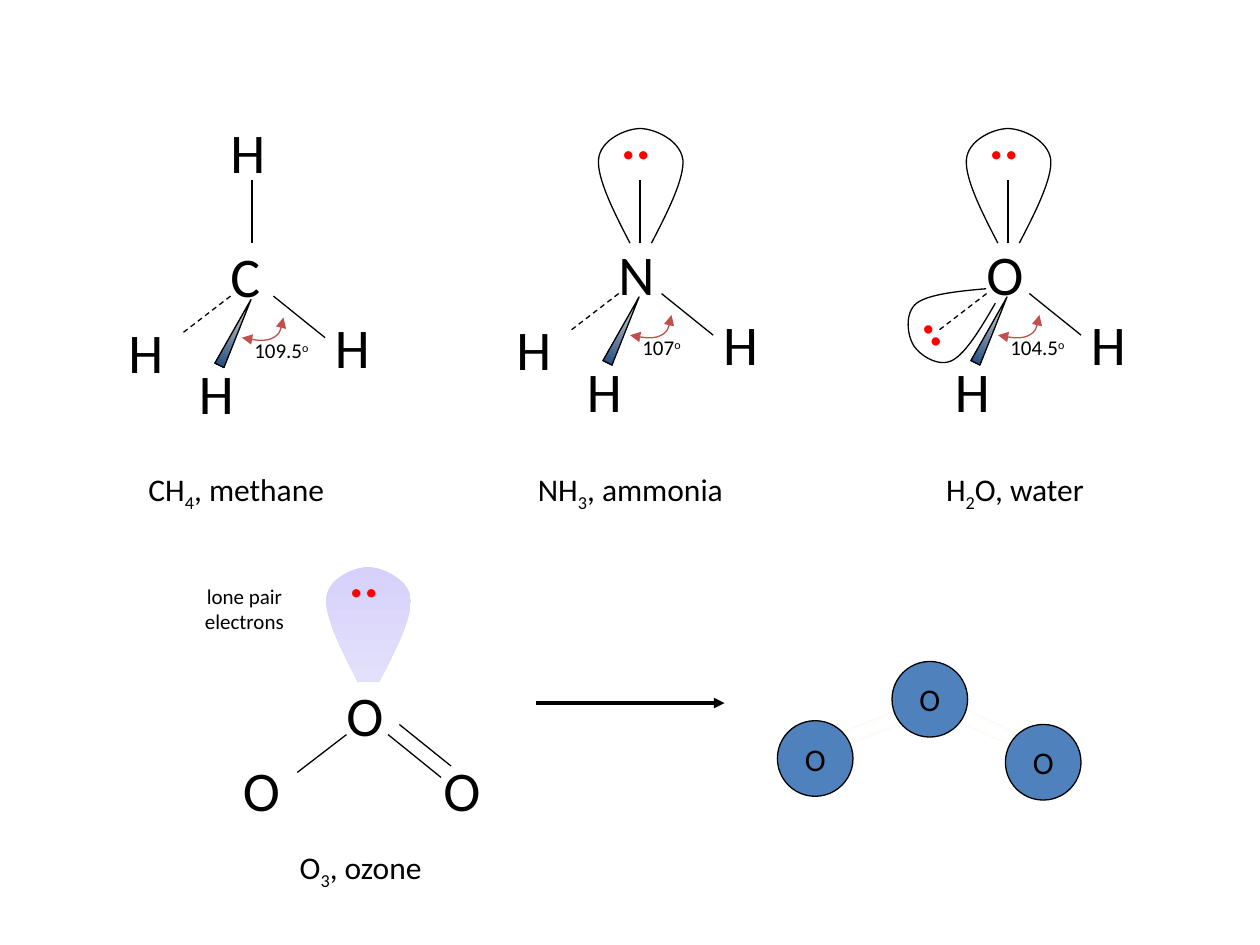
from copy import deepcopy

from lxml import etree
from pptx import Presentation
from pptx.dml.color import RGBColor
from pptx.enum.dml import MSO_LINE
from pptx.enum.shapes import MSO_CONNECTOR, MSO_SHAPE
from pptx.enum.text import MSO_ANCHOR, MSO_AUTO_SIZE, PP_ALIGN
from pptx.oxml.ns import qn
from pptx.util import Inches, Pt

STRAIGHT = MSO_CONNECTOR.STRAIGHT
DASH = MSO_LINE.DASH
TRIANGLE = MSO_SHAPE.ISOSCELES_TRIANGLE
RECTANGLE = MSO_SHAPE.RECTANGLE
OVAL = MSO_SHAPE.OVAL
MIDDLE = MSO_ANCHOR.MIDDLE
FIT_SHAPE = MSO_AUTO_SIZE.SHAPE_TO_FIT_TEXT
LEFT, CENTER = PP_ALIGN.LEFT, PP_ALIGN.CENTER

FONT = "Calibri"
BLACK, RED, BLUE, ARC_RED = "000000", "FF0000", "4F81BD", "C0504D"
WEDGE_COLORS = ("EEECE1", "1F497D")
BOND_COLORS = ("EEECE1", "FFFFFF", "EEECE1")
LOBE_COLORS = ("D6D1FB", "E3E0FC")
SUPER, SUB = 30, -25

# Curves: a start point, then three points per Bezier segment
LOBE = [(0.26, 0.91), (0.13, 0.66), (0, 0.4), (0.01, 0.25),
        (0.02, 0.09), (0.23, 0), (0.34, 0), (0.45, 0), (0.66, 0.09),
        (0.68, 0.25), (0.69, 0.4), (0.56, 0.66), (0.43, 0.91)]
ANGLE_ARC = [(0, 0.16), (0.09, 0.18), (0.19, 0.19), (0.25, 0.16),
             (0.3, 0.13), (0.32, 0.07), (0.33, 0)]


def rgb(color):
    return RGBColor.from_string(color)


def set_line(shape, color, width=0.75):
    shape.line.color.rgb = rgb(color)
    shape.line.width = Pt(width)


def set_gradient(shape, colors):
    """Fill from top to bottom with evenly spaced colours."""
    shape.fill.gradient()
    shape.fill.gradient_angle = 270
    stop_list = shape._element.spPr.find(".//" + qn("a:gsLst"))
    for _ in colors[2:]:
        stop_list.append(deepcopy(stop_list[0]))
    for index, (stop, color) in enumerate(zip(shape.fill.gradient_stops, colors)):
        stop.color.rgb = rgb(color)
        stop.position = index / (len(colors) - 1)


def add_arrowheads(shape, *ends):
    line = shape._element.spPr.find(qn("a:ln"))
    for end in ends:
        etree.SubElement(line, qn(end), type="triangle")


def write_text(frame, text, size=32, color=BLACK, bold=False, align=LEFT):
    """Write lines of text; a line may be a list of (text, baseline) runs."""
    frame.word_wrap = False
    lines = text.split("\n") if isinstance(text, str) else [text]
    for index, line in enumerate(lines):
        paragraph = frame.add_paragraph() if index else frame.paragraphs[0]
        paragraph.alignment = align
        for part, baseline in [(line, 0)] if isinstance(line, str) else line:
            run = paragraph.add_run()
            run.text = part
            run.font.name = FONT
            run.font.size = Pt(size)
            run.font.bold = bold
            run.font.color.rgb = rgb(color)
            if baseline:
                run._r.get_or_add_rPr().set("baseline", str(baseline * 1000))


def add_label(slide, text, left, top, width=0.52, height=0.63, rotation=0, **style):
    box = slide.shapes.add_textbox(*map(Inches, (left, top, width, height)))
    box.rotation = rotation
    write_text(box.text_frame, text, **style)
    box.text_frame.auto_size = FIT_SHAPE


def add_line(slide, x1, y1, x2, y2, width=0.75, dash=None):
    line = slide.shapes.add_connector(STRAIGHT, *map(Inches, (x1, y1, x2, y2)))
    set_line(line, BLACK, width)
    if dash:
        line.line.dash_style = dash
    etree.SubElement(line._element.spPr, qn("a:effectLst"))
    return line


def add_preset(slide, kind, left, top, width, height, rotation=0):
    shape = slide.shapes.add_shape(kind, *map(Inches, (left, top, width, height)))
    shape.rotation = rotation
    shape.shadow.inherit = False
    return shape


def add_curve(slide, points, left, top, scale=1):
    placed = [(Inches(left + x * scale), Inches(top + y * scale)) for x, y in points]
    builder = slide.shapes.build_freeform(*placed[0], scale=1.0)
    builder.add_line_segments(placed[1:], close=False)
    shape = builder.convert_to_shape()
    shape.shadow.inherit = False
    shape.fill.background()
    # Turn every three segments into one Bezier segment
    outline = shape._element.spPr.find(".//" + qn("a:path"))
    segments = outline.findall(qn("a:lnTo"))
    for start in range(0, len(segments), 3):
        curve = etree.SubElement(outline, qn("a:cubicBezTo"))
        for segment in segments[start:start + 3]:
            curve.append(segment[0])
            outline.remove(segment)
    return shape


def add_electrons(slide, left, top, rotation=0):
    add_label(slide, "..", left, top, 0.45, rotation=rotation, color=RED, bold=True)


def add_lone_pair(slide, x, top):
    lobe = add_curve(slide, LOBE, x - 0.34, top)
    add_electrons(slide, x - 0.25, top - 0.25)
    return lobe


def add_molecule(slide, x, y, atom, angle, hydrogens, angle_width=0.68):
    """Draw a tetrahedral centre with its bonds; x, y is below the atom."""
    add_label(slide, atom, x - 0.27, y - 0.48)
    add_line(slide, x, 1.93, x, 1.43)
    add_line(slide, x - 0.17, y, x - 0.56, y + 0.3, dash=DASH)
    wedge = add_preset(slide, TRIANGLE, x - 0.17, y, 0.08, 0.58, 26.3)
    wedge.adjustments[0] = 0.417
    set_gradient(wedge, WEDGE_COLORS)
    set_line(wedge, BLACK)
    add_line(slide, x + 0.17, y, x + 0.58, y + 0.33)
    arc = add_curve(slide, ANGLE_ARC, x - 0.08, y + 0.17)
    set_line(arc, ARC_RED)
    add_arrowheads(arc, "a:headEnd", "a:tailEnd")
    add_label(slide, [(angle, 0), ("o", SUPER)], x - 0.08, y + 0.28,
              angle_width, 0.3, size=12)
    for dx, dy in hydrogens:
        add_label(slide, "H", x + dx, y + dy)


def add_ozone(slide):
    # Structural formula
    set_lobe = add_lone_pair(slide, 2.92, 4.5)
    set_gradient(set_lobe, LOBE_COLORS)
    set_lobe.line.fill.background()
    add_label(slide, "lone pair\nelectrons", 1.5, 4.58, 0.88, 0.5,
              size=12, align=CENTER)
    for left, top in ((2.65, 5.35), (3.42, 5.95), (1.83, 5.95)):
        add_label(slide, "O", left, top, 0.55)
    add_line(slide, 2.75, 5.83, 2.36, 6.13)
    add_line(slide, 3.17, 5.75, 3.58, 6.08)
    add_line(slide, 3.08, 5.83, 3.5, 6.17)

    # Arrow to the ball model
    arrow = add_line(slide, 4.25, 5.58, 5.75, 5.58, width=2)
    add_arrowheads(arrow, "a:tailEnd")

    # Ball model
    for left, rotation in ((7.44, 24.4), (6.52, 338.6)):
        bond = add_preset(slide, RECTANGLE, left, 5.72, 0.81, 0.11, rotation)
        set_gradient(bond, BOND_COLORS)
        bond.line.fill.background()
    for left, top in ((6.17, 5.72), (7.08, 5.25), (7.98, 5.75)):
        ball = add_preset(slide, OVAL, left, top, 0.6, 0.6)
        ball.fill.solid()
        ball.fill.fore_color.rgb = rgb(BLUE)
        set_line(ball, BLACK)
        ball.text_frame.vertical_anchor = MIDDLE
        write_text(ball.text_frame, "O", size=18, align=CENTER)


def main():
    presentation = Presentation()
    presentation.slide_width, presentation.slide_height = Inches(10), Inches(7.5)
    slide = presentation.slides.add_slide(presentation.slide_layouts[6])

    # Methane, ammonia and water
    top, right, left, front = (-0.27, -1.47), (0.56, 0.08), (-1.08, 0.12), (-0.52, 0.45)
    add_molecule(slide, 2, 2.35, "C", "109.5", (top, right, left, front))
    add_molecule(slide, 5.08, 2.33, "N", "107", (right, left, front), 0.54)
    add_molecule(slide, 8, 2.33, "O", "104.5", (right, front))
    for x in (5.08, 8):
        set_line(add_lone_pair(slide, x, 1.02), BLACK)

    # Second lone pair of water
    side_lobe = add_curve(slide, LOBE, 7.28, 2.18, scale=0.8)
    side_lobe.rotation = 237.5
    set_line(side_lobe, BLACK)
    add_electrons(slide, 7.04, 2.42, 239.5)

    add_ozone(slide)

    # Formulas with names
    for start, count, end, x, y, width in (
            ("CH", "4", ", methane", 1.08, 3.68, 1.77),
            ("NH", "3", ", ammonia", 4.17, 3.68, 1.82),
            ("H", "2", "O, water", 7.41, 3.68, 1.42),
            ("O", "3", ", ozone", 2.28, 6.68, 1.31)):
        add_label(slide, [(start, 0), (count, SUB), (end, 0)], x, y, width, 0.4, size=18)

    presentation.save("out.pptx")


if __name__ == "__main__":
    main()
